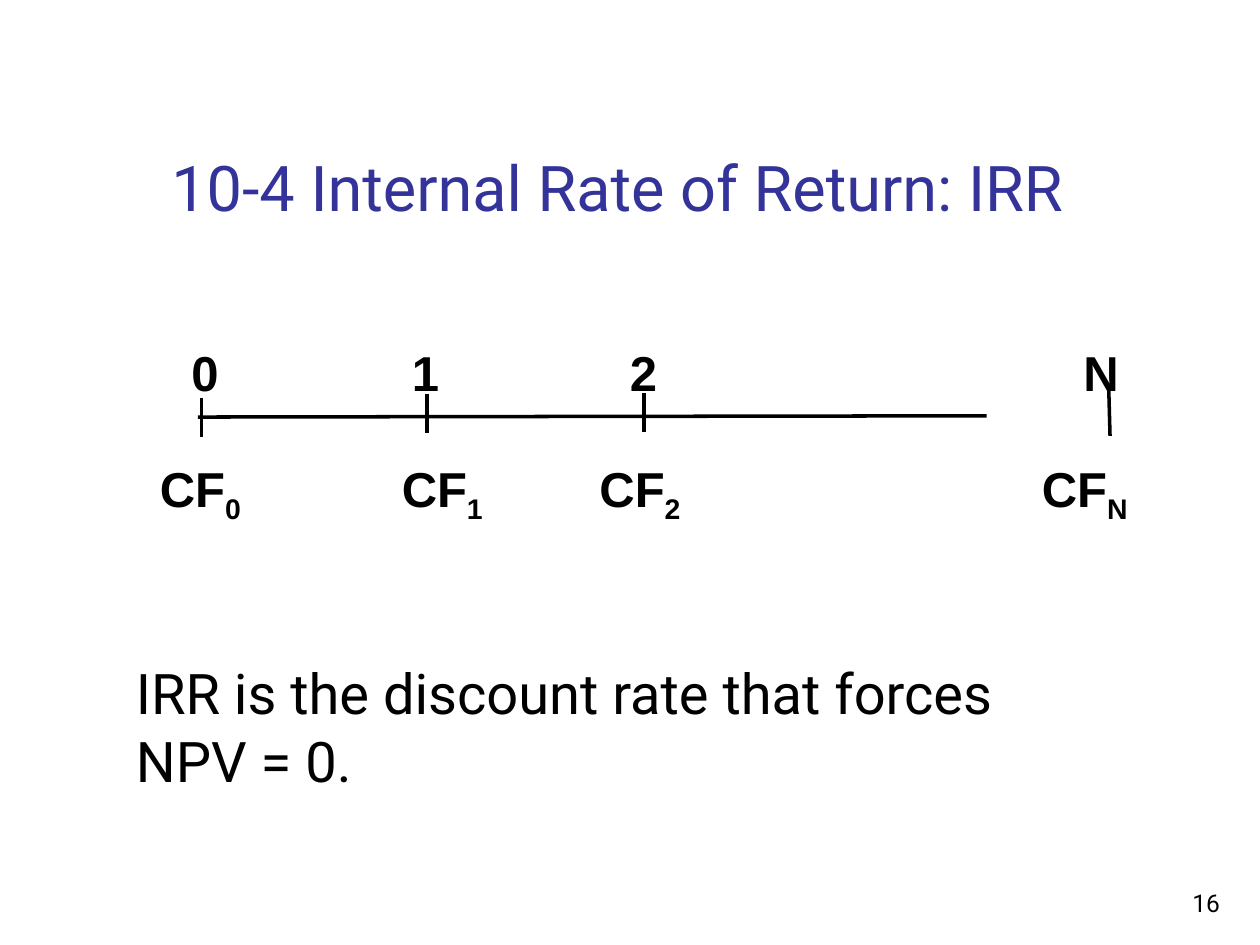
from dataclasses import dataclass

from lxml.etree import SubElement
from pptx import Presentation
from pptx.dml.color import RGBColor
from pptx.enum.shapes import MSO_CONNECTOR as Connector
from pptx.enum.text import MSO_ANCHOR as Anchor, MSO_AUTO_SIZE as AutoSize, PP_ALIGN as Align
from pptx.oxml.ns import qn
from pptx.util import Inches, Pt

BLACK = RGBColor(0x00, 0x00, 0x00)
INDIGO = RGBColor(0x33, 0x33, 0x99)
WHITE = RGBColor(0xFF, 0xFF, 0xFF)
HEADING_FONT, TIMELINE_FONT = "Roboto", "Arial"
COLUMNS, ROWS = 100, 75
SLIDE_WIDTH, SLIDE_HEIGHT = Inches(10), Inches(7.5)


@dataclass
class Box:
    """An area in grid columns and rows."""
    left: float
    top: float
    width: float
    height: float

    def inner(self, left, top, width, height):
        return Box(self.left + left, self.top + top, width, height)

    def emu(self):
        column, row = SLIDE_WIDTH / COLUMNS, SLIDE_HEIGHT / ROWS
        return (round(self.left * column), round(self.top * row),
                round(self.width * column), round(self.height * row))


@dataclass
class Period:
    """Column offsets and widths of one period, and the rows of its tick."""
    label: str
    number: tuple
    cash_flow: tuple
    tick: tuple
    tick_rows: tuple


PERIODS = [
    Period("0", (2.5, 4.1), (0, 8.6), (4.3, 4.3), (4.9, 8)),
    Period("1", (20, 4.3), (19.2, 10.2), (22.2, 22.2), (4.6, 7.7)),
    Period("2", (37.3, 4), (34.9, 10.7), (39.4, 39.4), (4.5, 7.6)),
    Period("N", (73.3, 4.8), (70, 9.1), (76.3, 76.4), (4.3, 7.9)),
]


def add_run(paragraph, text, font_name, size, color=BLACK, bold=False):
    run = paragraph.add_run()
    run.text = text
    font = run.font
    font.name, font.size, font.bold = font_name, Pt(size), bold
    font.color.rgb = color
    return run


def add_text_frame(slide, box, wrap=True):
    frame = slide.shapes.add_textbox(*box.emu()).text_frame
    frame.word_wrap = wrap
    return frame


def add_rule(slide, box, start, end):
    """Draw a line between two points given relative to the box."""
    x1, y1, _, _ = box.inner(*start, 0, 0).emu()
    x2, y2, _, _ = box.inner(*end, 0, 0).emu()
    rule = slide.shapes.add_connector(Connector.STRAIGHT, x1, y1, x2, y2)
    rule.line.color.rgb = BLACK
    rule.line.width = Pt(2)
    SubElement(rule._element.spPr, qn("a:effectLst"))


def add_title(slide, box):
    title = slide.shapes.title
    title.left, title.top, title.width, title.height = box.emu()
    frame = title.text_frame
    frame.auto_size = AutoSize.NONE
    frame.vertical_anchor = Anchor.BOTTOM
    heading = frame.paragraphs[0]
    heading.alignment = Align.LEFT
    add_run(heading, "10-4 Internal Rate of Return: IRR", HEADING_FONT, 36, INDIGO)


def add_timeline(slide, box):
    add_rule(slide, box, (4, 6.4), (66.6, 6.3))
    for period in PERIODS:
        (tick_left, tick_right), (tick_top, tick_bottom) = period.tick, period.tick_rows
        add_rule(slide, box, (tick_left, tick_top), (tick_right, tick_bottom))
        for (left, width), top, prefix in ((period.number, 0, ""),
                                           (period.cash_flow, 9.2, "CF")):
            frame = add_text_frame(slide, box.inner(left, top, width, 5.7), wrap=False)
            paragraph = frame.paragraphs[0]
            if prefix:
                add_run(paragraph, prefix, TIMELINE_FONT, 28, bold=True)
            label = add_run(paragraph, period.label, TIMELINE_FONT, 28, bold=True)
            if prefix:
                label.font._element.set("baseline", "-25000")


def add_definition(slide, box):
    frame = add_text_frame(slide, box)
    add_run(frame.paragraphs[0], "IRR is the discount rate that forces", HEADING_FONT, 32)
    add_run(frame.add_paragraph(), "NPV = 0.", HEADING_FONT, 32)


def add_page_number(slide, box):
    frame = add_text_frame(slide, box)
    frame.vertical_anchor = Anchor.BOTTOM
    number = frame.paragraphs[0]
    number.alignment = Align.RIGHT
    add_run(number, "16", HEADING_FONT, 14)


def main():
    presentation = Presentation()
    presentation.slide_width, presentation.slide_height = SLIDE_WIDTH, SLIDE_HEIGHT
    slide = presentation.slides.add_slide(presentation.slide_layouts[5])
    background = slide.background.fill
    background.solid()
    background.fore_color.rgb = WHITE
    add_page_number(slide, Box(77, 68.3, 20.8, 5))
    add_title(slide, Box(12.6, 2.3, 85.2, 16))
    add_timeline(slide, Box(11.7, 26.7, 79.1, 14.9))
    add_definition(slide, Box(9.8, 51.8, 80.1, 11.8))
    presentation.save("out.pptx")


if __name__ == "__main__":
    main()
